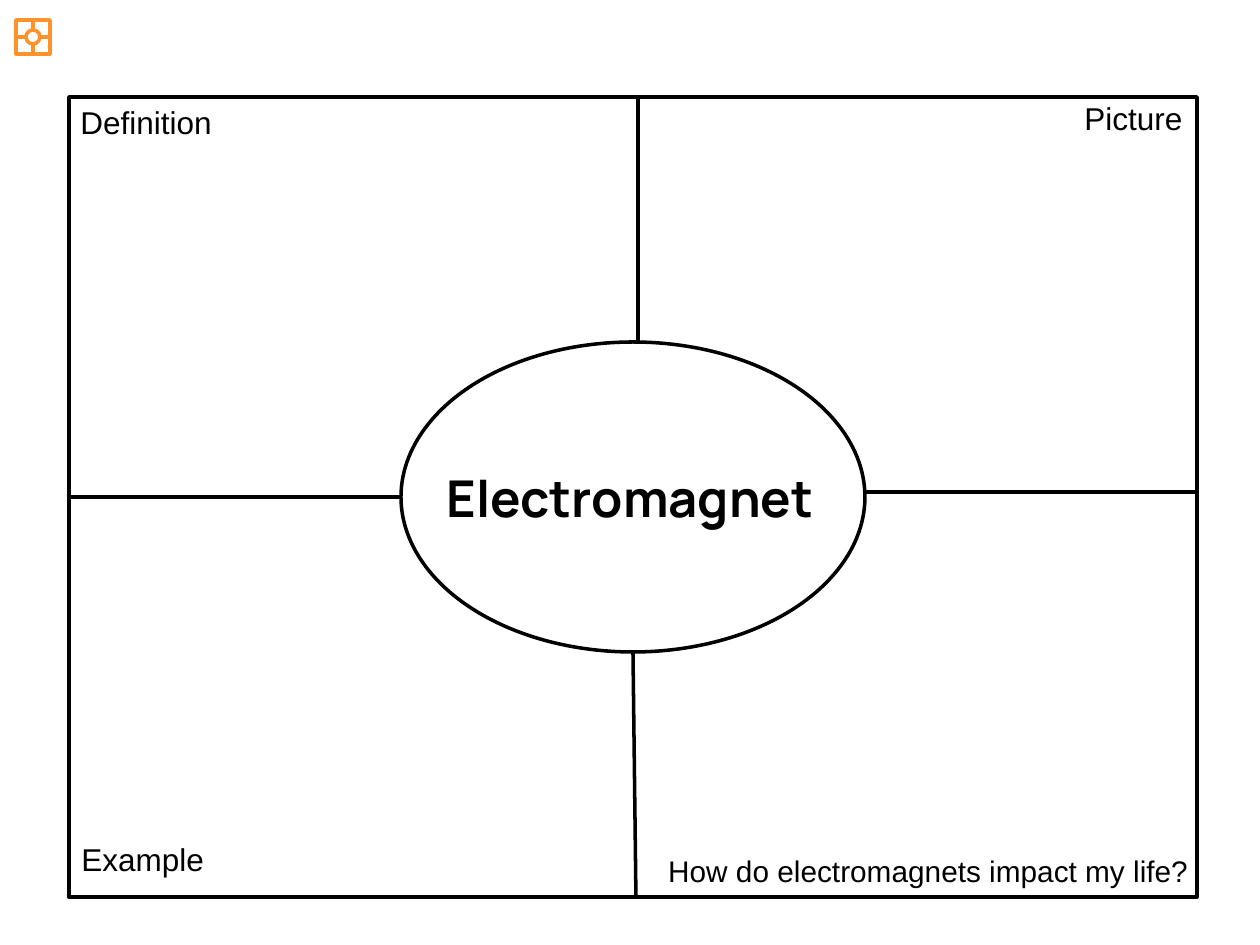
import pptx
import pptx.util
import pptx.dml.color
import pptx.enum.shapes
import pptx.enum.text
import pptx.oxml.ns
import lxml.etree

PX = 914400 // 126
SHAPE = pptx.enum.shapes.MSO_SHAPE
ALIGN = pptx.enum.text.PP_ALIGN
BLACK, WHITE, ORANGE = "000000", "FFFFFF", "FF932B"


def emu(*lengths):
    return [pptx.util.Emu(v * PX) for v in lengths]


def rgb(color):
    return pptx.dml.color.RGBColor.from_string(color)


def set_line(sp, color):
    sp.line.color.rgb = rgb(color)
    sp.line.width = pptx.util.Pt(2)


def add_outline(s, kind, box, color, fill=None):
    sp = s.shapes.add_shape(kind, *emu(*box))
    sp.shadow.inherit = False
    if fill:
        sp.fill.solid()
        sp.fill.fore_color.rgb = rgb(fill)
    else:
        sp.fill.background()
    set_line(sp, color)


def add_spoke(s, start, end, color):
    sp = s.shapes.add_connector(
        pptx.enum.shapes.MSO_CONNECTOR.STRAIGHT, *emu(*start, *end))
    lxml.etree.SubElement(sp._element.spPr, pptx.oxml.ns.qn("a:effectLst"))
    set_line(sp, color)


def add_text(s, box, text, align=ALIGN.LEFT, **font):
    sp = s.shapes.add_textbox(*emu(*box))
    tf = sp.text_frame
    tf.word_wrap = True
    tf.auto_size = pptx.enum.text.MSO_AUTO_SIZE.SHAPE_TO_FIT_TEXT
    p = tf.paragraphs[0]
    p.alignment = align
    r = p.add_run()
    r.text = text
    fmt = {"name": "Arial", "size": pptx.util.Pt(18), "bold": False, **font}
    for key, value in fmt.items():
        setattr(r.font, key, value)
    r.font.color.rgb = rgb(BLACK)


def four_square(s, box, oval, color, shifts=((0, 0),) * 4):
    """Frame, centred oval and four spokes; shifts move each spoke's
    outer and inner end sideways (top, bottom, left, right)."""
    x, y, w, h = box
    ow, oh = oval
    ox, oy = x + (w - ow) // 2, y + (h - oh) // 2
    cx, cy = ox + ow // 2, oy + oh // 2
    top, bottom, left, right = shifts

    add_outline(s, SHAPE.RECTANGLE, box, color)
    add_spoke(s, (cx + top[0], y), (cx + top[1], oy), color)
    add_spoke(s, (cx + bottom[1], oy + oh), (cx + bottom[0], y + h), color)
    add_spoke(s, (x, cy + left[0]), (ox, cy + left[1]), color)
    add_spoke(s, (ox + ow, cy + right[1]), (x + w, cy + right[0]), color)
    add_outline(s, SHAPE.OVAL, (ox, oy, ow, oh), color, WHITE)


def labels(s, box):
    """Topic in the middle and one heading in each corner."""
    x, y, w, h = box
    add_text(s, (x + 343, y + 364, 436, 74), "Electromagnet", ALIGN.CENTER,
             name="Manrope", size=pptx.util.Pt(29), bold=True)
    add_text(s, (x - 1, y, 158, 50), "Definition")
    add_text(s, (x, y + h - 63, 149, 50), "Example")
    add_text(s, (x + w - 125, y - 4, 125, 50), "Picture")
    add_text(s, (x + w - 617, y + h - 50, 621, 49),
             "How do electromagnets impact my life?", ALIGN.RIGHT,
             size=pptx.util.Pt(17))


def main():
    prs = pptx.Presentation()
    prs.slide_width, prs.slide_height = emu(1260, 945)
    s = prs.slides.add_slide(prs.slide_layouts[6])

    # Main organizer
    box = (69, 97, 1128, 800)
    four_square(s, box, (464, 310), BLACK,
                ((5, 5), (3, 0), (0, 0), (-5, -5)))
    labels(s, box)

    # Small organizer icon
    four_square(s, (16, 20, 34, 34), (14, 14), ORANGE)

    prs.save("out.pptx")


if __name__ == "__main__":
    main()
